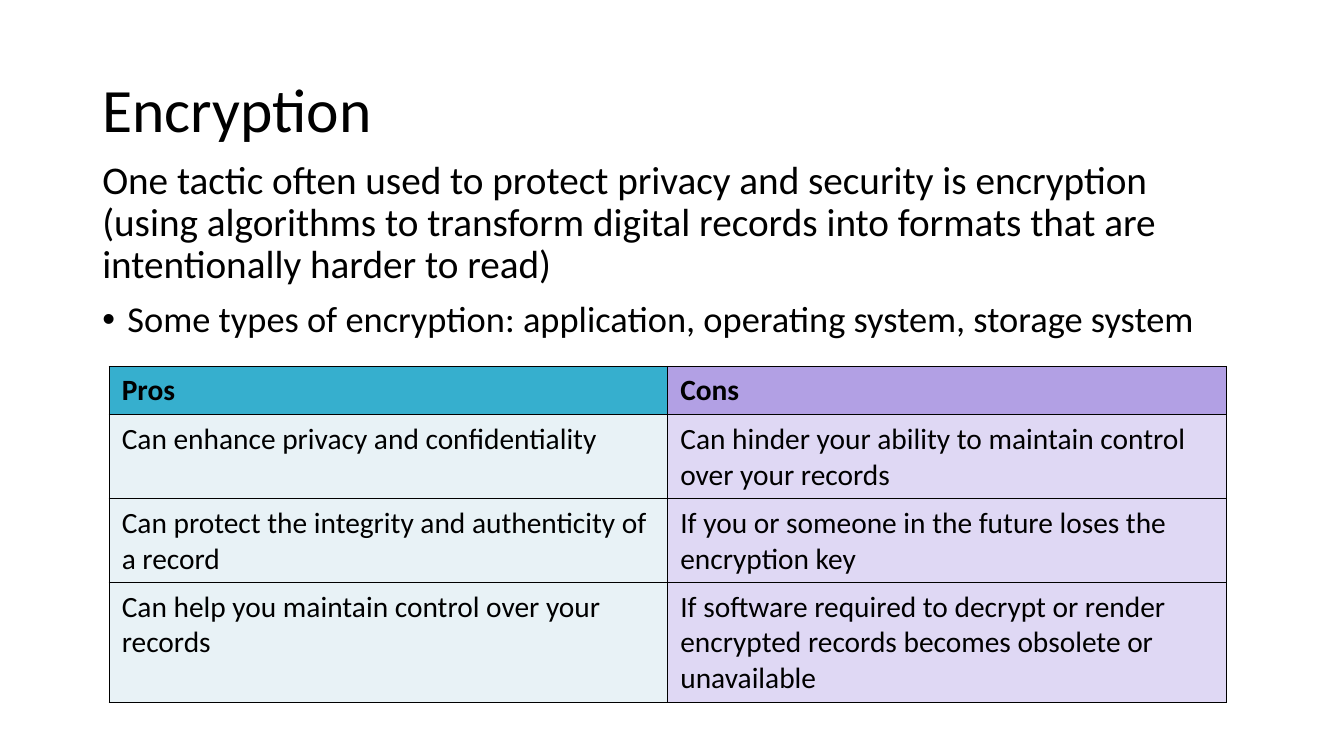
from dataclasses import dataclass

from lxml.etree import SubElement
from pptx import Presentation
from pptx.dml.color import RGBColor
from pptx.enum.text import MSO_ANCHOR
from pptx.oxml.ns import qn
from pptx.util import Pt

EMU_PER_PX = 9525


@dataclass(frozen=True)
class Theme:
    font: str = "Calibri"
    ink: str = "000000"
    headers: tuple = ("36AFCE", "B2A0E4")
    bodies: tuple = ("E8F2F6", "DFD8F4")
    title_size: int = 44
    intro_size: int = 28
    bullet_size: int = 26
    table_size: int = 21
    border_width: int = 1


THEME = Theme()

PROS_AND_CONS = [
    ("Pros", "Cons"),
    ("Can enhance privacy and confidentiality",
     "Can hinder your ability to maintain control over your records"),
    ("Can protect the integrity and authenticity of a record",
     "If you or someone in the future loses the encryption key"),
    ("Can help you maintain control over your records",
     "If software required to decrypt or render encrypted records becomes "
     "obsolete or unavailable"),
]
ROW_HEIGHTS = (46, 80, 80, 114)
COLUMN_WIDTH = 532


def px(length):
    return length * EMU_PER_PX


def write(paragraph, text, size, bold=False, line_spacing=None, space_before=0,
          bullet_indent=0):
    if line_spacing:
        paragraph.line_spacing = line_spacing
    if space_before:
        paragraph.space_before = Pt(space_before)
    if bullet_indent:
        properties = paragraph._p.get_or_add_pPr()
        properties.set("marL", str(px(bullet_indent)))
        properties.set("indent", str(-px(bullet_indent)))
        SubElement(properties, qn("a:buFont"), typeface="Arial")
        SubElement(properties, qn("a:buChar"), char="•")
    run = paragraph.add_run()
    run.text = text
    run.font.name = THEME.font
    run.font.size = Pt(size)
    run.font.bold = bold
    run.font.color.rgb = RGBColor.from_string(THEME.ink)


def add_text_frame(slide, left, top, width, height, anchor=MSO_ANCHOR.TOP):
    frame = slide.shapes.add_textbox(
        px(left), px(top), px(width), px(height)).text_frame
    frame.word_wrap = True
    frame.vertical_anchor = anchor
    return frame


def outline_cell(cell):
    properties = cell._tc.get_or_add_tcPr()
    for side in ("a:lnL", "a:lnR", "a:lnT", "a:lnB"):
        border = SubElement(properties, qn(side), w=str(Pt(THEME.border_width)))
        fill = SubElement(border, qn("a:solidFill"))
        SubElement(fill, qn("a:srgbClr"), val=THEME.ink)


def fill_cell(cell, text, color, bold):
    cell.margin_left = cell.margin_right = px(12)
    cell.margin_top = cell.margin_bottom = px(6)
    outline_cell(cell)
    cell.fill.solid()
    cell.fill.fore_color.rgb = RGBColor.from_string(color)
    write(cell.text_frame.paragraphs[0], text, size=THEME.table_size, bold=bold)


def add_comparison(slide, left, top):
    columns = len(PROS_AND_CONS[0])
    comparison = slide.shapes.add_table(
        len(PROS_AND_CONS), columns, px(left), px(top),
        px(COLUMN_WIDTH * columns), px(sum(ROW_HEIGHTS))).table
    comparison.horz_banding = False
    for column in comparison.columns:
        column.width = px(COLUMN_WIDTH)
    for row, (height, texts) in enumerate(zip(ROW_HEIGHTS, PROS_AND_CONS)):
        comparison.rows[row].height = px(height)
        colors = THEME.bodies if row else THEME.headers
        for column, (text, color) in enumerate(zip(texts, colors)):
            fill_cell(comparison.cell(row, column), text, color, bold=row == 0)


def main():
    presentation = Presentation()
    presentation.slide_width = px(1280)
    presentation.slide_height = px(720)
    slide = presentation.slides.add_slide(presentation.slide_layouts[6])

    title = add_text_frame(slide, 88, 38, 1104, 139, MSO_ANCHOR.MIDDLE)
    write(title.paragraphs[0], "Encryption", size=THEME.title_size,
          line_spacing=0.9)

    intro = add_text_frame(slide, 88, 148, 1104, 246)
    write(intro.paragraphs[0],
          "One tactic often used to protect privacy and security is encryption "
          "(using algorithms to transform digital records into formats that are "
          "intentionally harder to read)",
          size=THEME.intro_size, line_spacing=0.9)
    write(intro.add_paragraph(),
          "Some types of encryption: application, operating system, storage system",
          size=THEME.bullet_size, line_spacing=0.9, space_before=10,
          bullet_indent=24)

    add_comparison(slide, 104, 349)
    presentation.save("out.pptx")


if __name__ == "__main__":
    main()
